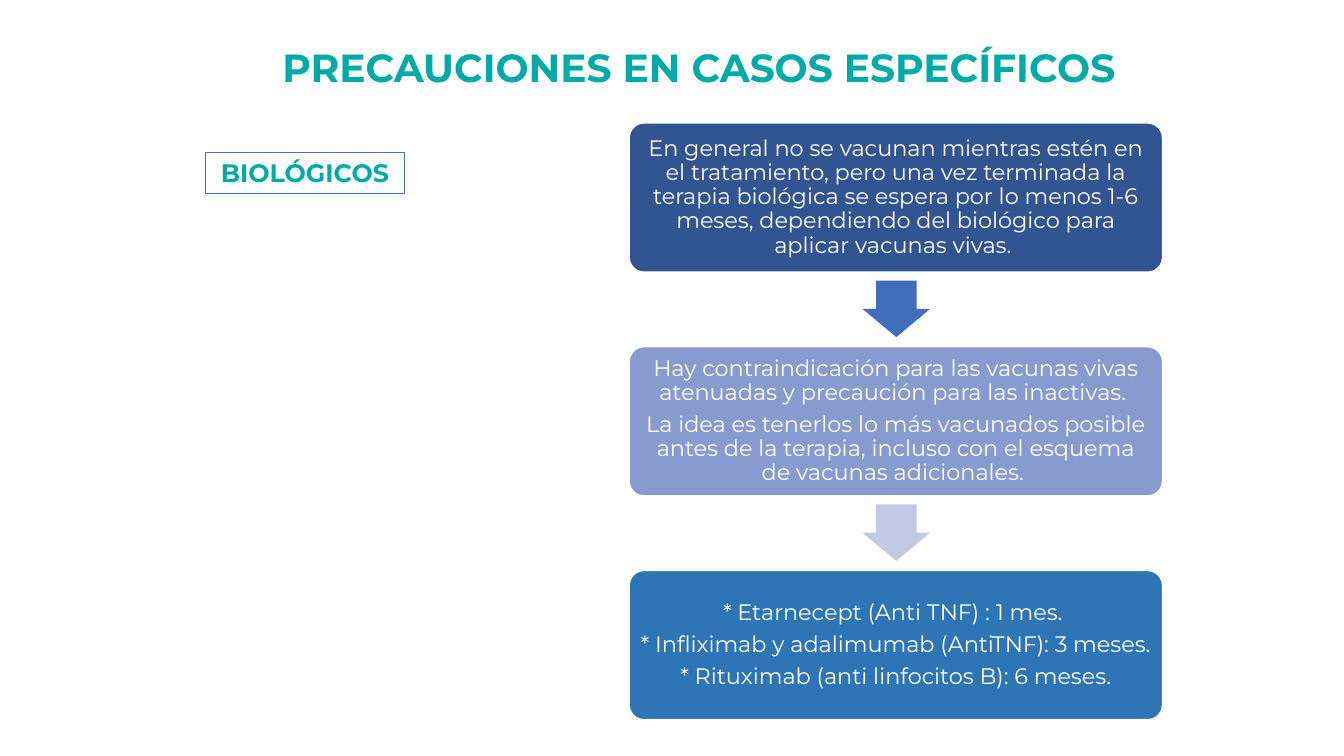
"""Builds the slide on vaccination precautions for patients on biological therapy."""
from dataclasses import dataclass

from pptx import Presentation
from pptx.dml.color import RGBColor
from pptx.enum.shapes import MSO_SHAPE as Preset
from pptx.enum.text import MSO_ANCHOR as Anchor, PP_ALIGN as Align
from pptx.util import Inches, Pt


@dataclass(frozen=True)
class Theme:
    font: str = "Montserrat"
    teal: str = "00AAA7"
    white: str = "FFFFFF"
    outline: str = "4472C4"
    box_fills: tuple = ("325491", "879BCE", "2E75B6")
    arrow_fills: tuple = ("416DBB", "C1C9E4")
    title_size: int = 28
    label_size: int = 18
    body_size: int = 16


THEME = Theme()


def write(frame, lines, size, color, bold=False, **spacing):
    """Fills a text frame with centred paragraphs in the theme font."""
    frame.word_wrap = True
    frame.text = "\n".join(lines)
    for paragraph in frame.paragraphs:
        for name, value in {"alignment": Align.CENTER, **spacing}.items():
            setattr(paragraph, name, value)
        font_format = {"name": THEME.font, "size": Pt(size), "bold": bold}
        for run in paragraph.runs:
            for name, value in font_format.items():
                setattr(run.font, name, value)
            run.font.color.rgb = RGBColor.from_string(color)


def add_preset(preset, left, top, width, height, fill=None, line=None, weight=1):
    """Adds a shadowless preset shape, measured in inches."""
    shape = slide.shapes.add_shape(
        preset, Inches(left), Inches(top), Inches(width), Inches(height))
    shape.shadow.inherit = False
    for part, color in ((shape.fill, fill), (shape.line.fill, line)):
        if color:
            part.solid()
            part.fore_color.rgb = RGBColor.from_string(color)
        else:
            part.background()
    if line:
        shape.line.width = Pt(weight)
    return shape


presentation = Presentation()
presentation.slide_width = Inches(13.33)
presentation.slide_height = Inches(7.5)
slide = presentation.slides.add_slide(presentation.slide_layouts[5])

title = slide.shapes.title
title_place = {"left": 2.48, "top": 0.38, "width": 9.01, "height": 0.57}
for name, value in title_place.items():
    setattr(title, name, Inches(value))
write(title.text_frame, ["PRECAUCIONES EN CASOS ESPECÍFICOS "],
      THEME.title_size, THEME.teal, bold=True)

biologics = add_preset(Preset.RECTANGLE, 2.04, 1.51, 1.97, 0.41,
                       line=THEME.outline, weight=0.75)
write(biologics.text_frame, ["BIOLÓGICOS"], THEME.label_size, THEME.teal, bold=True)

STEPS = [
    ["En general no se vacunan mientras estén en el tratamiento, pero una vez "
     "terminada la terapia biológica se espera por lo menos 1-6 meses, "
     "dependiendo del biológico para aplicar vacunas vivas. "],
    ["Hay contraindicación para las vacunas vivas atenuadas y precaución para "
     "las inactivas. ",
     "La idea es tenerlos lo más vacunados posible antes de la terapia, incluso "
     "con el esquema de vacunas adicionales. "],
    ["* Etarnecept (Anti TNF) : 1 mes. ",
     "* Infliximab y adalimumab (AntiTNF): 3 meses. ",
     "* Rituximab (anti linfocitos B): 6 meses."],
]
FIRST_TOP, STEP_PITCH = 1.22, 2.22
INSETS = {"margin_left": 0.06, "margin_right": 0.06,
          "margin_top": 0.07, "margin_bottom": 0.07}

for index, (lines, fill) in enumerate(zip(STEPS, THEME.box_fills)):
    step = add_preset(Preset.ROUNDED_RECTANGLE, 6.24, FIRST_TOP + index * STEP_PITCH,
                      5.29, 1.48, fill, THEME.white)
    step.adjustments[0] = 0.1
    for name, value in INSETS.items():
        setattr(step.text_frame, name, Inches(value))
    step.text_frame.vertical_anchor = Anchor.MIDDLE
    write(step.text_frame, lines, THEME.body_size, THEME.white,
          line_spacing=0.9, space_after=Pt(5.6))

for index, fill in enumerate(THEME.arrow_fills):
    arrow = add_preset(Preset.RIGHT_ARROW, 8.61, FIRST_TOP + 1.51 + index * STEP_PITCH,
                       0.56, 0.67, fill)
    arrow.rotation = 90
    arrow.adjustments[0] = 0.6
    arrow.adjustments[1] = 0.5

presentation.save("out.pptx")
